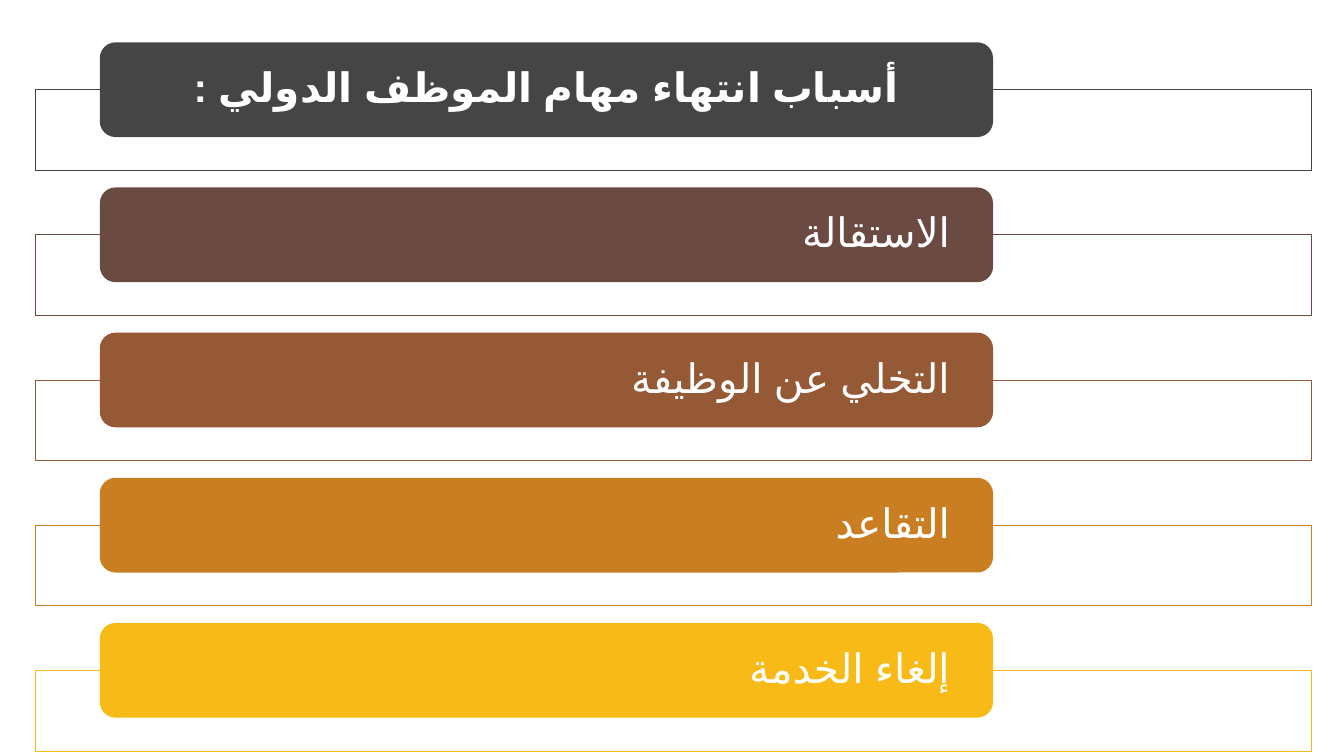
"""Build a slide listing the reasons an international official's duties end."""
from lxml.etree import SubElement
from pptx import Presentation
from pptx.dml.color import RGBColor
from pptx.enum.lang import MSO_LANGUAGE_ID
from pptx.enum.shapes import MSO_SHAPE
from pptx.enum.text import MSO_ANCHOR, MSO_AUTO_SIZE, PP_ALIGN
from pptx.oxml.ns import qn
from pptx.util import Inches, Pt

WHITE = RGBColor(0xFF, 0xFF, 0xFF)
CHARCOAL = RGBColor(0x45, 0x45, 0x45)
COCOA = RGBColor(0x6A, 0x4A, 0x41)
RUST = RGBColor(0x96, 0x59, 0x36)
OCHRE = RGBColor(0xC9, 0x7E, 0x22)
AMBER = RGBColor(0xF8, 0xBA, 0x17)

HEADING = "أسباب انتهاء مهام الموظف الدولي :"
ROWS = [
    (HEADING, CHARCOAL),
    ("الاستقالة", COCOA),
    ("التخلي عن الوظيفة", RUST),
    ("التقاعد", OCHRE),
    ("إلغاء الخدمة", AMBER),
]
FIRST_TOP, ROW_PITCH = 0.42, 1.44
BAR_LEFT, BAR_WIDTH, BAR_HEIGHT = 0.99, 8.86, 0.94
FRAME_LEFT, FRAME_WIDTH, FRAME_HEIGHT = 0.35, 12.66, 0.8
LABEL_INSET = 0.05


def add_block(kind, left, top, width, height, fill):
    block = page.shapes.add_shape(
        kind, Inches(left), Inches(top), Inches(width), Inches(height))
    block.shadow.inherit = False
    block.fill.solid()
    block.fill.fore_color.rgb = fill
    block.line.fill.background()
    return block


def write_label(box, text, align, bold):
    frame = box.text_frame
    frame.word_wrap = True
    frame.auto_size = MSO_AUTO_SIZE.NONE
    frame.vertical_anchor = MSO_ANCHOR.MIDDLE
    frame.margin_left = frame.margin_right = Inches(0.33 + LABEL_INSET)
    frame.margin_top = frame.margin_bottom = 0
    para = frame.paragraphs[0]
    para.text = text
    para.alignment = align
    para.line_spacing = 0.9
    para.font.size = Pt(29)
    para.font.bold = bold
    para.font.name = "Arial"
    para.font.color.rgb = WHITE
    settings = para._p.get_or_add_pPr()
    settings.set("rtl", "1")
    SubElement(settings.find(qn("a:defRPr")), qn("a:cs"), typeface="Arial")
    para.runs[0].font.language_id = MSO_LANGUAGE_ID.ARABIC_ALGERIA


deck = Presentation()
deck.slide_width = Inches(13.33)
deck.slide_height = Inches(7.5)
page = deck.slides.add_slide(deck.slide_layouts[5])
title = page.shapes.title

for row, (text, colour) in enumerate(ROWS):
    top = FIRST_TOP + row * ROW_PITCH
    frame_box = add_block(MSO_SHAPE.RECTANGLE, FRAME_LEFT, top + BAR_HEIGHT / 2,
                          FRAME_WIDTH, FRAME_HEIGHT, WHITE)
    frame_box.line.color.rgb = colour
    frame_box.line.width = Pt(0.5)
    white_fill = frame_box.element.spPr.find(qn("a:solidFill"))
    SubElement(white_fill[0], qn("a:alpha"), val="90000")
    bar = add_block(MSO_SHAPE.ROUNDED_RECTANGLE, BAR_LEFT, top, BAR_WIDTH, BAR_HEIGHT, colour)
    if text != HEADING:
        write_label(bar, text, PP_ALIGN.RIGHT, False)

title.left = Inches(BAR_LEFT)
title.top = Inches(FIRST_TOP)
title.width = Inches(BAR_WIDTH)
title.height = Inches(BAR_HEIGHT)
write_label(title, HEADING, PP_ALIGN.CENTER, True)
title.element.getparent().append(title.element)

deck.save("out.pptx")
